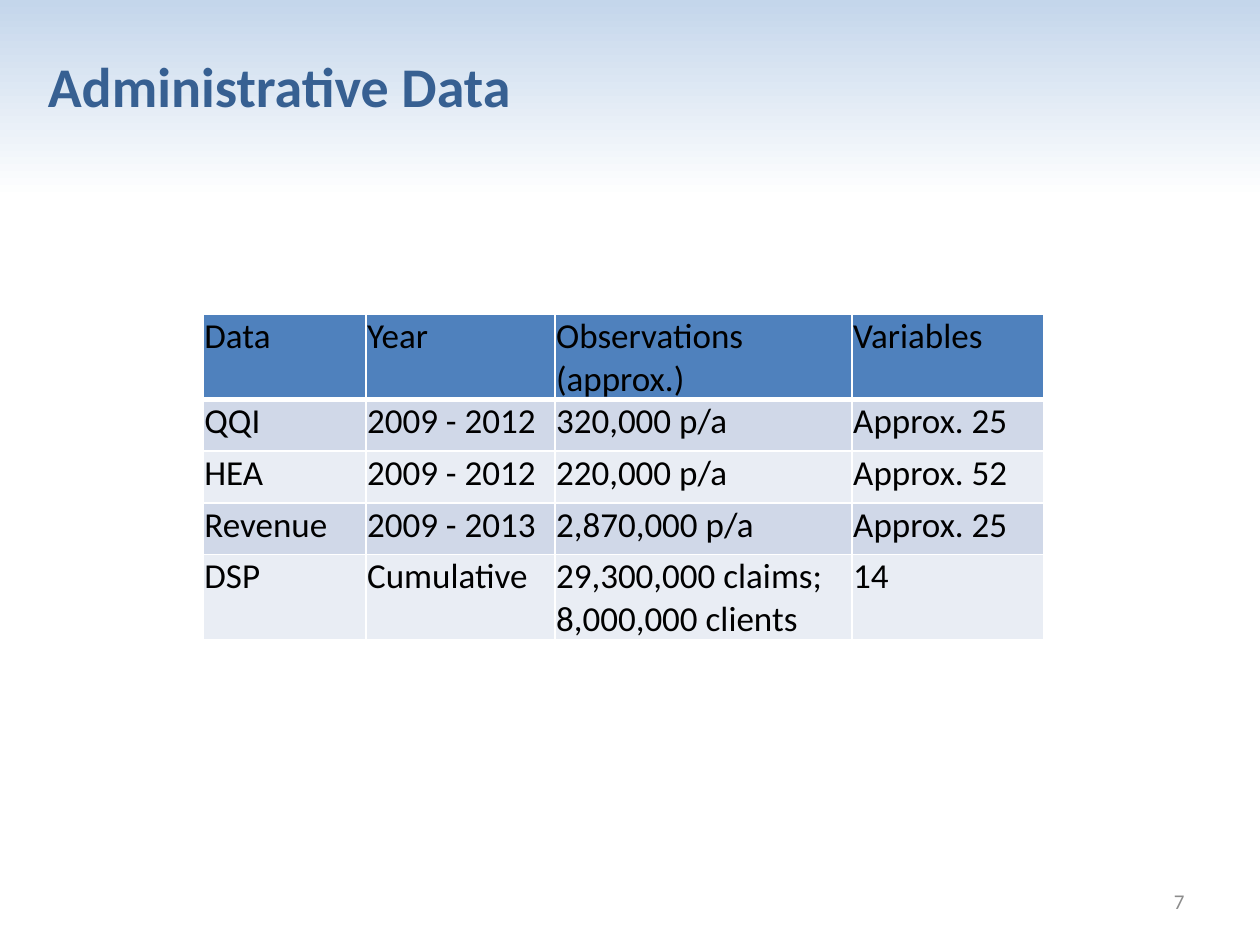
from lxml.etree import SubElement
from pptx import Presentation
from pptx.dml.color import RGBColor
from pptx.enum.text import MSO_ANCHOR, PP_ALIGN
from pptx.oxml.ns import qn
from pptx.util import Cm, Pt

ROWS = [
    ("Data", "Year", "Observations (approx.)", "Variables"),
    ("QQI", "2009 - 2012", "320,000 p/a", "Approx. 25"),
    ("HEA", "2009 - 2012", "220,000 p/a", "Approx. 52"),
    ("Revenue", "2009 - 2013", "2,870,000 p/a", "Approx. 25"),
    ("DSP", "Cumulative", "29,300,000 claims; 8,000,000 clients", "14"),
]
COLUMN_WIDTHS = [3.28, 3.81, 5.99, 3.86]
ROW_HEIGHT = 1.04
HEADER_FILL = "4F81BD"
BAND_FILLS = ["E9EDF4", "D0D8E8"]


def color(value):
    return RGBColor.from_string(value)


def write_text(frame, text, size=20, ink="000000", bold=False,
               align=PP_ALIGN.LEFT, anchor=MSO_ANCHOR.TOP):
    frame.word_wrap = True
    frame.vertical_anchor = anchor
    para = frame.paragraphs[0]
    para.alignment = align
    span = para.add_run()
    span.text = text
    span.font.name = "Calibri"
    span.font.size = Pt(size)
    span.font.bold = bold
    span.font.color.rgb = color(ink)


def paint_background(page):
    fill = page.background.fill
    fill.gradient()
    fill.gradient_angle = 270
    for stop, position, shade in zip(fill.gradient_stops, (0, 0.21), ("C4D6EB", "FFFFFF")):
        stop.position = position
        stop.color.rgb = color(shade)


def add_title(page, text):
    title = page.shapes.title
    title.left, title.top, title.width, title.height = Cm(0.71), Cm(0.91), Cm(24), Cm(2.39)
    write_text(title.text_frame, text, size=32, ink="376092", bold=True)


def add_page_number(page, number):
    box = page.shapes.add_textbox(Cm(18.21), Cm(17.65), Cm(5.92), Cm(1.02))
    write_text(box.text_frame, number, size=12, ink="8C8C8C",
               align=PP_ALIGN.RIGHT, anchor=MSO_ANCHOR.MIDDLE)


def add_borders(cell, bottom):
    properties = cell._tc.get_or_add_tcPr()
    for position, (side, width) in enumerate(
            [("lnL", 1), ("lnR", 1), ("lnT", 1), ("lnB", bottom)]):
        line = SubElement(properties, qn(f"a:{side}"), w=str(Pt(width)))
        SubElement(SubElement(line, qn("a:solidFill")), qn("a:srgbClr"), val="FFFFFF")
        properties.insert(position, line)


def format_cell(cell, text, row):
    cell.margin_left = cell.margin_right = cell.margin_top = Cm(0.02)
    cell.margin_bottom = 0
    cell.fill.solid()
    cell.fill.fore_color.rgb = color(BAND_FILLS[row % 2] if row else HEADER_FILL)
    add_borders(cell, bottom=1 if row else 3)
    write_text(cell.text_frame, text)


def add_data_table(page):
    table = page.shapes.add_table(
        len(ROWS), len(COLUMN_WIDTHS), Cm(4.1), Cm(6.34),
        Cm(sum(COLUMN_WIDTHS)), Cm(ROW_HEIGHT * len(ROWS))).table
    for column, width in zip(table.columns, COLUMN_WIDTHS):
        column.width = Cm(width)
    for row, texts in enumerate(ROWS):
        table.rows[row].height = Cm(ROW_HEIGHT)
        for column, text in enumerate(texts):
            format_cell(table.cell(row, column), text, row)


def main():
    deck = Presentation()
    deck.slide_width, deck.slide_height = Cm(25.4), Cm(19.05)
    page = deck.slides.add_slide(deck.slide_layouts[5])
    paint_background(page)
    add_title(page, "Administrative Data")
    add_page_number(page, "7")
    add_data_table(page)
    deck.save("out.pptx")


if __name__ == "__main__":
    main()
